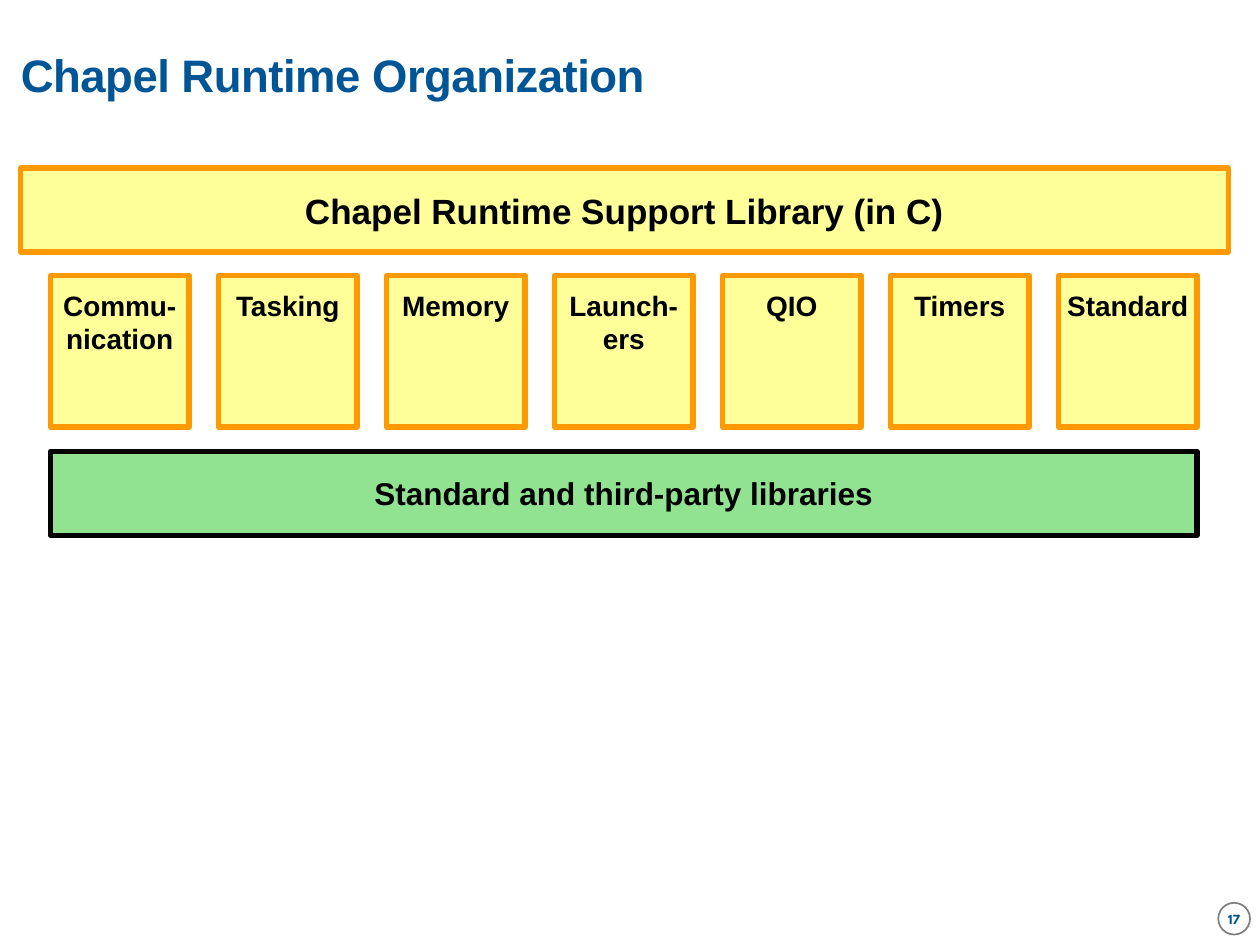
from pptx import Presentation
from pptx.dml.color import RGBColor
from pptx.enum.shapes import MSO_SHAPE as SHAPE
from pptx.enum.text import MSO_ANCHOR as ANCHOR, PP_ALIGN as ALIGN
from pptx.util import Cm, Pt

COLORS = {
    "blue": "005596", "white": "FFFFFF", "gray": "808080", "black": "000000",
    "yellow": "FFFF99", "orange": "FF9900", "green": "91E391",
}


def color(name):
    return RGBColor.from_string(COLORS[name])


def add_box(box, text, size, fill="yellow", line="orange", line_width=3,
            kind=SHAPE.RECTANGLE, font="Arial", ink="black",
            anchor=ANCHOR.MIDDLE, inset_x=0.25, inset_y=0.13):
    sp = s.shapes.add_shape(kind, *[Cm(v) for v in box])
    sp.shadow.inherit = False
    sp.fill.solid()
    sp.fill.fore_color.rgb = color(fill)
    sp.line.color.rgb = color(line)
    sp.line.width = Pt(line_width)
    tf = sp.text_frame
    tf.word_wrap = False
    tf.vertical_anchor = anchor
    tf.margin_left = tf.margin_right = Cm(inset_x)
    tf.margin_top = tf.margin_bottom = Cm(inset_y)
    p = tf.paragraphs[0]
    p.text = text
    p.alignment = ALIGN.CENTER
    p.font.name = font
    p.font.size = Pt(size)
    p.font.bold = True
    p.font.color.rgb = color(ink)


prs = Presentation()
prs.slide_width, prs.slide_height = Cm(25.4), Cm(19.05)
s = prs.slides.add_slide(prs.slide_layouts[6])

# Title
tf = s.shapes.add_textbox(Cm(0.42), Cm(0.42), Cm(20.32), Cm(2.33)).text_frame
tf.word_wrap = True
tf.vertical_anchor = ANCHOR.MIDDLE
tf.margin_left = tf.margin_right = tf.margin_top = tf.margin_bottom = 0
p = tf.paragraphs[0]
p.line_spacing = 0.85
p.font.name = "Arial"
p.font.size = Pt(26)
p.font.bold = True
p.font.color.rgb = color("blue")
r = p.add_run()
r.text = "Chapel Runtime Organization"
r._r.get_or_add_rPr().set("spc", "-30")

# Slide number
add_box((24.56, 18.2, 0.64, 0.64), "17", 8, "white", "gray", 1, SHAPE.OVAL,
        "League Spartan", "blue", inset_x=0, inset_y=0)

# Runtime library bar
add_box((0.42, 3.39, 24.34, 1.69), "Chapel Runtime Support Library (in C)", 20)

# Row of runtime components
left, width, count = 1.02, 23.11, 7
box_width = 2.79
pitch = (width - box_width) / (count - 1)
components = ["Commu-\nnication", "Tasking", "Memory", "Launch-\ners",
              "QIO", "Timers", "Standard"]
for i, name in enumerate(components):
    add_box((left + i * pitch, 5.56, box_width, 3.05), name, 16,
            anchor=ANCHOR.TOP, inset_y=0.25)

# Underlying libraries bar
add_box((left, 9.1, width, 1.69), "Standard and third-party libraries", 18,
        "green", "black")

prs.save("out.pptx")
